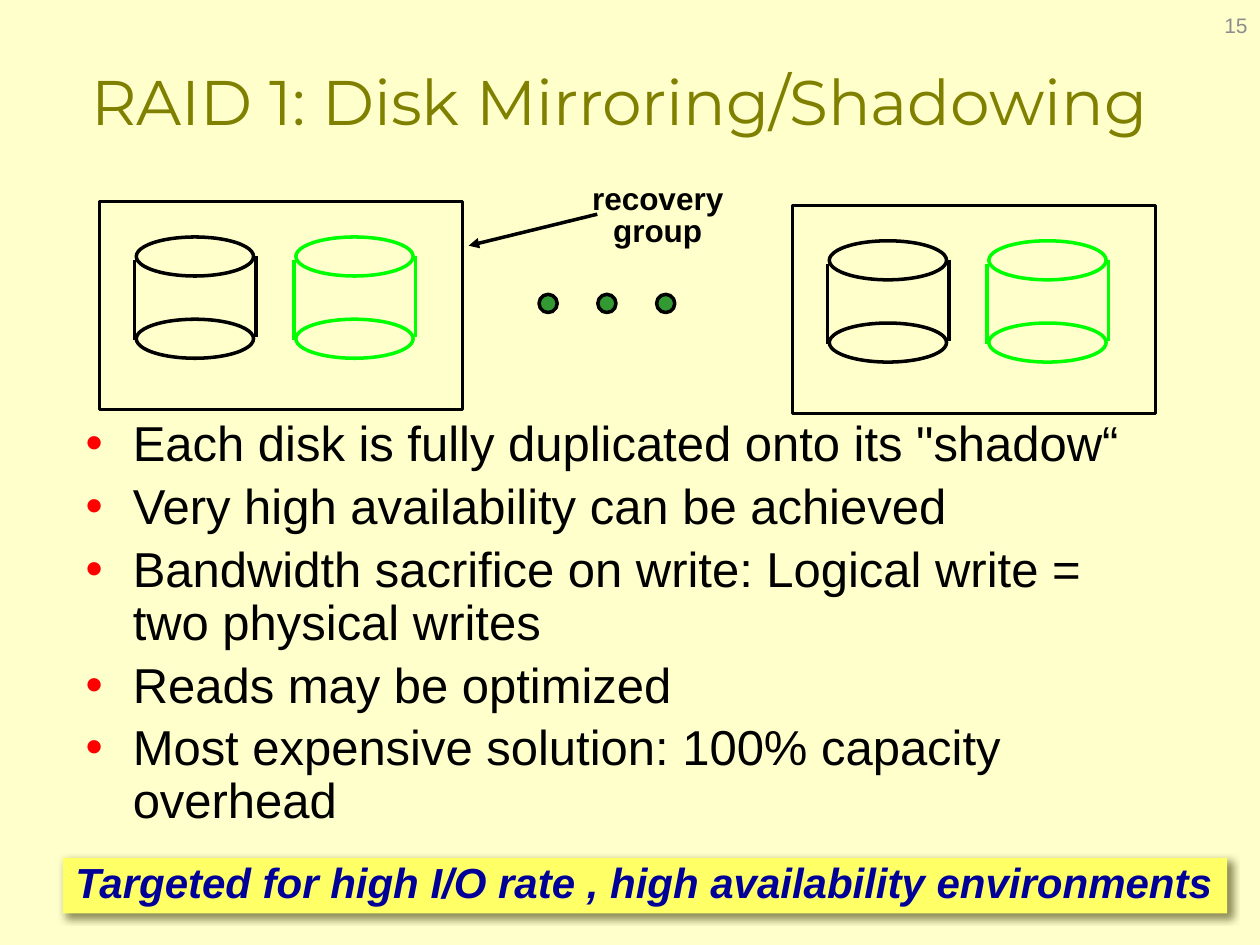
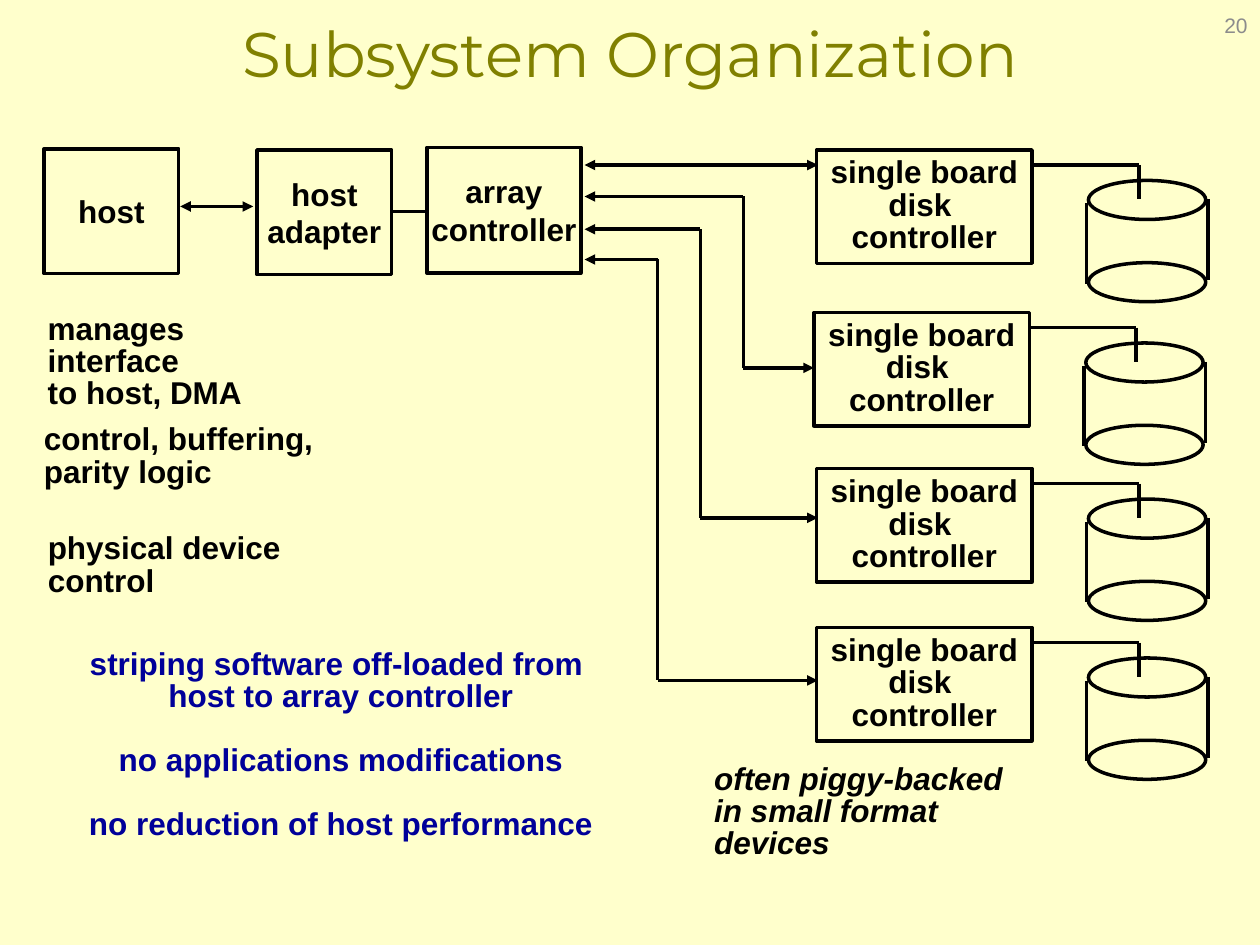
from lxml.etree import SubElement
from pptx import Presentation
from pptx.dml.color import RGBColor
from pptx.enum.shapes import MSO_CONNECTOR, MSO_SHAPE
from pptx.enum.text import MSO_ANCHOR, PP_ALIGN
from pptx.oxml.ns import qn
from pptx.util import Pt

CREAM = RGBColor(0xFF, 0xFF, 0xCC)
YELLOW = RGBColor(0xFF, 0xFF, 0x66)
BLACK = RGBColor(0x00, 0x00, 0x00)
LIME = RGBColor(0x00, 0xFF, 0x00)
GREEN = RGBColor(0x33, 0x99, 0x33)
NAVY = RGBColor(0x00, 0x00, 0x99)
OLIVE = RGBColor(0x80, 0x80, 0x00)
GRAY = RGBColor(0x8C, 0x8C, 0x8C)
RED = RGBColor(0xFF, 0x00, 0x00)
SHADOW = RGBColor(0x66, 0x66, 0x33)

SLIDE_WIDTH, SLIDE_HEIGHT = 720, 540
LINE_WIDTH = 2
TITLE_FONT, BODY_FONT = "Montserrat", "Arial"


class Deck:
    def __init__(self):
        self.presentation = Presentation()
        self.presentation.slide_width = Pt(SLIDE_WIDTH)
        self.presentation.slide_height = Pt(SLIDE_HEIGHT)
        self.slide = None

    def new_slide(self, title, title_area, number):
        self.slide = self.presentation.slides.add_slide(self.presentation.slide_layouts[6])
        self.slide.background.fill.solid()
        self.slide.background.fill.fore_color.rgb = CREAM
        self.text([title], *title_area, size=36, font=TITLE_FONT, color=OLIVE, bold=False,
                  align=PP_ALIGN.CENTER, anchor=MSO_ANCHOR.MIDDLE, wrap=True, spacing=1)
        self.text([number], 552, 0, 168, 29, size=12, color=GRAY, bold=False,
                  align=PP_ALIGN.RIGHT, anchor=MSO_ANCHOR.MIDDLE, wrap=True, spacing=1)

    def fill_text(self, shape, lines, size=18, font=BODY_FONT, color=BLACK, bold=True,
                  italic=False, align=PP_ALIGN.LEFT, anchor=MSO_ANCHOR.TOP, spacing=0.85,
                  wrap=False, gaps=()):
        frame = shape.text_frame
        frame.word_wrap = wrap
        frame.vertical_anchor = anchor
        for index, line in enumerate(lines):
            paragraph = frame.add_paragraph() if index else frame.paragraphs[0]
            paragraph.alignment = align
            paragraph.line_spacing = spacing
            paragraph.space_before = Pt(gaps[index] if gaps else 0)
            run = paragraph.add_run()
            run.text = line
            run.font.size = Pt(size)
            run.font.name = font
            run.font.color.rgb = color
            run.font.bold = bold
            run.font.italic = italic
        return frame

    def text(self, lines, x, y, width, height, **style):
        box = self.slide.shapes.add_textbox(Pt(x), Pt(y), Pt(width), Pt(height))
        return self.fill_text(box, lines, **style)

    def bullets(self, lines, x, y, width, height):
        frame = self.text(lines, x, y, width, height, size=28, bold=False, spacing=0.9,
                          wrap=True, gaps=[5.6] * len(lines))
        for paragraph in frame.paragraphs:
            properties = paragraph._p.get_or_add_pPr()
            properties.set("marL", str(Pt(27)))
            properties.set("indent", str(Pt(-27)))
            color = SubElement(properties, qn("a:buClr"))
            SubElement(color, qn("a:srgbClr"), val=str(RED))
            SubElement(properties, qn("a:buFont"), typeface=BODY_FONT)
            SubElement(properties, qn("a:buChar"), char="•")

    def shape(self, kind, x, y, width, height, fill=CREAM, line=BLACK):
        shape = self.slide.shapes.add_shape(kind, Pt(x), Pt(y), Pt(width), Pt(height))
        shape.shadow.inherit = False
        if fill is None:
            shape.fill.background()
        else:
            shape.fill.solid()
            shape.fill.fore_color.rgb = fill
        if line is None:
            shape.line.fill.background()
        else:
            shape.line.color.rgb = line
            shape.line.width = Pt(LINE_WIDTH)
        return shape

    def box(self, lines, x, y, width, height, spacing=1):
        box = self.shape(MSO_SHAPE.RECTANGLE, x, y, width, height)
        self.fill_text(box, lines, align=PP_ALIGN.CENTER, anchor=MSO_ANCHOR.MIDDLE,
                       spacing=spacing)

    def banner(self, line, x, y, width, height):
        banner = self.shape(MSO_SHAPE.RECTANGLE, x, y, width, height, YELLOW, None)
        effects = banner._element.spPr.find(qn("a:effectLst"))
        shadow = SubElement(effects, qn("a:outerShdw"), blurRad=str(Pt(5)), dist=str(Pt(3)),
                            dir="2700000", algn="ctr", rotWithShape="0")
        color = SubElement(shadow, qn("a:srgbClr"), val=str(SHADOW))
        SubElement(color, qn("a:alpha"), val="75000")
        self.fill_text(banner, [line], size=24, color=NAVY, italic=True)

    def line(self, x1, y1, x2, y2, color=BLACK, head=False, tail=False):
        line = self.slide.shapes.add_connector(
            MSO_CONNECTOR.STRAIGHT, Pt(x1), Pt(y1), Pt(x2), Pt(y2))
        line.line.color.rgb = color
        line.line.width = Pt(LINE_WIDTH)
        outline = line._element.spPr.find(qn("a:ln"))
        for end, wanted in (("a:headEnd", head), ("a:tailEnd", tail)):
            if wanted:
                SubElement(outline, qn(end), type="triangle")
        SubElement(line._element.spPr, qn("a:effectLst"))

    def disk(self, x, y, color=BLACK):
        for platter_y in (y, y + 47):
            self.shape(MSO_SHAPE.OVAL, x, platter_y, 67, 22.3, line=color)
        self.line(x - 1, y + 13, x - 1, y + 59, color)
        self.line(x + 68.4, y + 10.8, x + 68.4, y + 57, color)

    def recovery_group(self, x, y):
        self.disk(x + 21, y + 20.2)
        self.disk(x + 112.2, y + 20.2, LIME)
        self.shape(MSO_SHAPE.RECTANGLE, x, y, 207.4, 118.8, fill=None)

    def disk_controller(self, x, y):
        self.box(["single board", "disk ", "controller"], x, y, 123.1, 64.8, spacing=0.86)
        self.disk(x + 155.4, y + 17.4)
        self.line(x + 123.1, y + 8.6, x + 184.2, y + 8.6)
        self.line(x + 184.2, y + 8.6, x + 184.2, y + 28.3)


def mirroring_slide(deck):
    deck.new_slide("RAID 1: Disk Mirroring/Shadowing", (41.8, 12.2, 624.2, 90), "15")
    deck.recovery_group(452.9, 117.4)
    deck.recovery_group(56.9, 115.2)
    for index in range(3):
        deck.shape(MSO_SHAPE.OVAL, 308 + 33.6 * index, 168.2, 10.4, 10.4, GREEN)
    deck.line(341.3, 122.4, 267.8, 140.4, tail=True)
    deck.text(["recovery", "group"], 331.2, 102.2, 89.3, 43.9, align=PP_ALIGN.CENTER)
    deck.bullets([
        "Each disk is fully duplicated onto its \"shadow“",
        "Very high availability can be achieved",
        "Bandwidth sacrifice on write: Logical write = two physical writes",
        "Reads may be optimized",
        "Most expensive solution: 100% capacity overhead",
    ], 41.8, 236.2, 624.2, 237.6)
    deck.banner("Targeted for high I/O rate , high availability environments",
                36, 490.3, 665.3, 31.7)


def organization_slide(deck):
    deck.new_slide("Subsystem Organization", (0, 0, SLIDE_WIDTH, 59.8), "20")
    deck.box(["host"], 25.2, 85, 77, 71.3)
    deck.box(["host", "adapter"], 146.9, 85.7, 77, 71.3)
    deck.box(["array", "controller"], 244.1, 84.2, 87.8, 72)
    deck.line(103, 118, 144.7, 118, head=True, tail=True)
    deck.line(224.6, 121, 244.1, 121)

    for x, y in ((466.6, 85.7), (465.1, 178.6), (466.6, 267.8), (466.6, 358.6)):
        deck.disk_controller(x, y)

    port_x = 334.1
    deck.line(port_x, 94.3, 467.3, 94.3, head=True, tail=True)
    branches = ((112.3, 210.2, 465.1), (131, 295.9, 467.3), (148.3, 388.8, 467.3))
    for index, (port_y, controller_y, controller_x) in enumerate(branches):
        trunk_x = 424.8 - 24.5 * index
        deck.line(trunk_x, port_y, port_x, port_y, tail=True)
        deck.line(trunk_x, port_y, trunk_x, controller_y)
        deck.line(trunk_x, controller_y, controller_x, controller_y, tail=True)

    duties = (
        (["manages interface", "to host, DMA"], 20.2, 176.4, 172),
        (["control, buffering,", "parity logic"], 18, 239.4, 168.5),
        (["physical device", "control"], 20.2, 301.7, 147.6),
    )
    for lines, x, y, width in duties:
        deck.text(lines, x, y, width, 43.9)
    deck.text(["often piggy-backed", "in small format devices"],
              401, 433.4, 213.1, 43.9, italic=True)
    deck.text([
        "striping software off-loaded from ",
        "host to array controller",
        "no applications modifications",
        "no reduction of host performance",
    ], 42.5, 366.5, 304.6, 119.5, color=NAVY, align=PP_ALIGN.CENTER,
        anchor=MSO_ANCHOR.MIDDLE, gaps=(0, 0, 18.4, 18.4))


def main():
    deck = Deck()
    mirroring_slide(deck)
    organization_slide(deck)
    deck.presentation.save("out.pptx")


if __name__ == "__main__":
    main()
